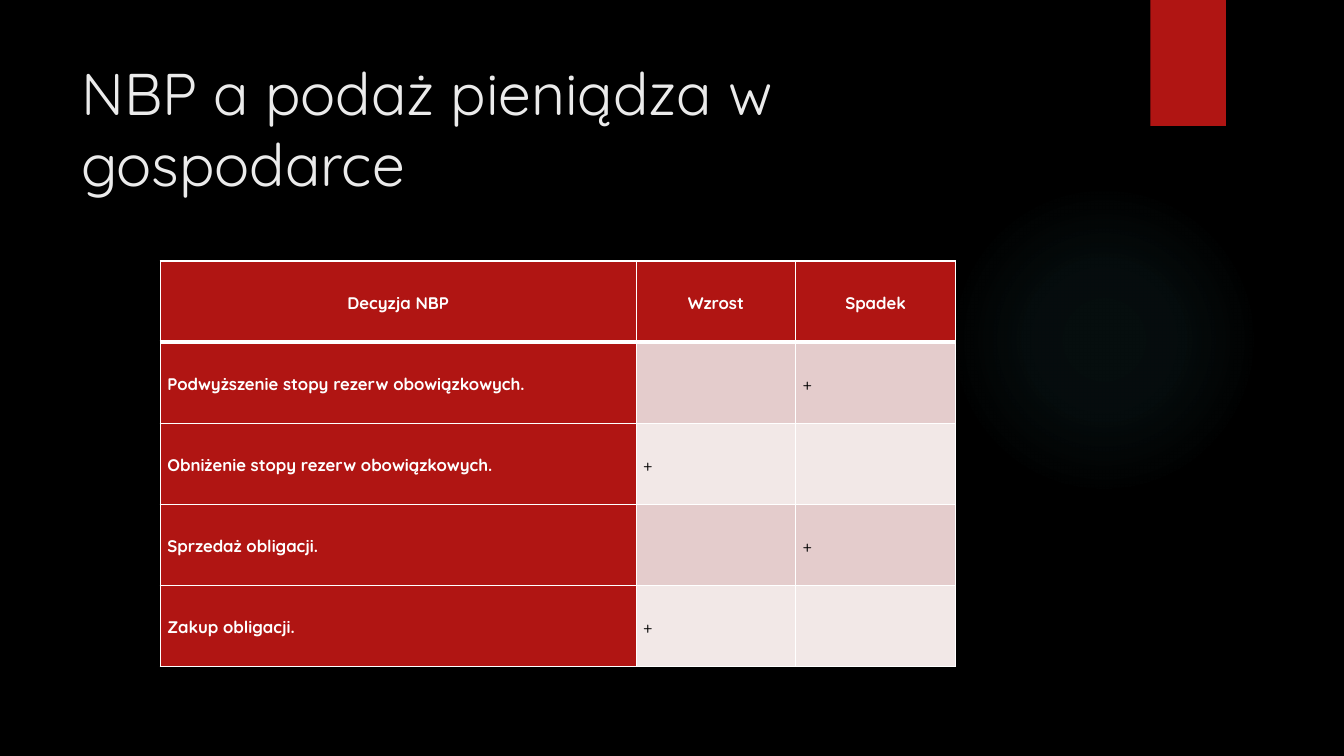
import pptx
import pptx.dml.color
import pptx.enum.shapes
import pptx.enum.text
import pptx.oxml
import pptx.oxml.ns
import pptx.util

Inches = pptx.util.Inches
Pt = pptx.util.Pt
RGBColor = pptx.dml.color.RGBColor
Shape = pptx.enum.shapes.MSO_SHAPE
Align = pptx.enum.text.PP_ALIGN
Anchor = pptx.enum.text.MSO_ANCHOR

BLACK = RGBColor(0x00, 0x00, 0x00)
WHITE = RGBColor(0xFF, 0xFF, 0xFF)
TITLE_GREY = RGBColor(0xEB, 0xEB, 0xEB)
RED = RGBColor(0xB0, 0x15, 0x13)
GLOW = RGBColor(0x50, 0xB9, 0xC1)
BANDS = (RGBColor(0xE4, 0xCC, 0xCC), RGBColor(0xF2, 0xE8, 0xE7))

FONT = "Quicksand"
GLOW_STOPS = ((0, 7), (36, 6), (69, 0))  # position and opacity, percent
COLUMN_WIDTHS = (4.72, 1.58, 1.59)
ROWS = (
    ("Decyzja NBP", "Wzrost", "Spadek"),
    ("Podwyższenie stopy rezerw obowiązkowych.", "", "+"),
    ("Obniżenie stopy rezerw obowiązkowych.", "+", ""),
    ("Sprzedaż obligacji.", "", "+"),
    ("Zakup obligacji.", "+", ""),
)


def apply(target, values):
    for name, value in values.items():
        setattr(target, name, value)


def add_plain_shape(page, kind, left, top, width, height, color):
    shape = page.shapes.add_shape(
        kind, Inches(left), Inches(top), Inches(width), Inches(height))
    shape.shadow.inherit = False
    shape.fill.solid()
    shape.fill.fore_color.rgb = color
    shape.line.fill.background()
    return shape


def fade_to_edge(shape, color, stops):
    """Replace the solid fill with a circular, translucent gradient."""
    stop_xml = "".join(
        f'<a:gs pos="{position * 1000}"><a:srgbClr val="{color}">'
        f'<a:alpha val="{opacity * 1000}"/></a:srgbClr></a:gs>'
        for position, opacity in stops)
    gradient = pptx.oxml.parse_xml(
        f'<a:gradFill {pptx.oxml.ns.nsdecls("a")} rotWithShape="1">'
        f'<a:gsLst>{stop_xml}</a:gsLst><a:path path="circle">'
        '<a:fillToRect l="50000" t="50000" r="50000" b="50000"/>'
        '</a:path></a:gradFill>')
    properties = shape.element.spPr
    solid = properties.find(pptx.oxml.ns.qn("a:solidFill"))
    properties.replace(solid, gradient)


def write(frame, text, font, paragraph=None):
    para = frame.paragraphs[0]
    apply(para, paragraph or {})
    span = para.add_run()
    span.text = text
    color = font.pop("color")
    apply(span.font, {"name": FONT, **font})
    span.font.color.rgb = color


def add_title(page, text):
    box = page.shapes.add_textbox(
        Inches(0.71), Inches(0.5), Inches(10.29), Inches(1.53))
    apply(box.text_frame, {"word_wrap": True, "vertical_anchor": Anchor.MIDDLE})
    write(box.text_frame, text, {"size": Pt(42), "color": TITLE_GREY})


def set_borders(cell, widths):
    for side, width in widths.items():
        cell._tc.get_or_add_tcPr().append(pptx.oxml.parse_xml(
            f'<a:ln{side} {pptx.oxml.ns.nsdecls("a")} w="{Pt(width)}">'
            f'<a:solidFill><a:srgbClr val="{WHITE}"/></a:solidFill></a:ln{side}>'))


def fill_cell(cell, text, row, column):
    is_header = row == 0
    is_label = is_header or column == 0
    set_borders(cell, {"L": 1, "R": 1, "T": 3 if row == 1 else 1,
                       "B": 3 if is_header else 1})
    cell.fill.solid()
    cell.fill.fore_color.rgb = RED if is_label else BANDS[(row - 1) % 2]
    apply(cell, {"vertical_anchor": Anchor.MIDDLE,
                 "margin_left": Inches(0.07), "margin_right": Inches(0.07),
                 "margin_top": 0, "margin_bottom": 0})
    if text:
        write(cell.text_frame, text,
              {"size": Pt(12), "bold": is_label,
               "color": WHITE if is_label else BLACK},
              {"alignment": Align.CENTER if is_header else Align.LEFT,
               "line_spacing": 1.15})


def add_decision_table(page):
    height = Inches(4.02)
    table = page.shapes.add_table(
        len(ROWS), len(COLUMN_WIDTHS), Inches(1.59), Inches(2.59),
        Inches(sum(COLUMN_WIDTHS)), height).table
    apply(table, {"first_row": False, "horz_banding": False})
    for column, width in zip(table.columns, COLUMN_WIDTHS):
        column.width = Inches(width)
    for row, texts in enumerate(ROWS):
        table.rows[row].height = height // len(ROWS)
        for column, text in enumerate(texts):
            fill_cell(table.cell(row, column), text, row, column)


def main():
    deck = pptx.Presentation()
    apply(deck, {"slide_width": Inches(13.33), "slide_height": Inches(7.5)})
    page = deck.slides.add_slide(deck.slide_layouts[6])
    page.background.fill.solid()
    page.background.fill.fore_color.rgb = BLACK

    # Backdrop: faint glow and red ribbon
    glow = add_plain_shape(page, Shape.OVAL, 9.41, 1.83, 3.08, 3.08, GLOW)
    fade_to_edge(glow, GLOW, GLOW_STOPS)
    add_plain_shape(page, Shape.RECTANGLE, 11.41, 0, 0.75, 1.25, RED)

    # Content
    add_title(page, "NBP a podaż pieniądza w gospodarce")
    add_decision_table(page)
    deck.save("out.pptx")


if __name__ == "__main__":
    main()
